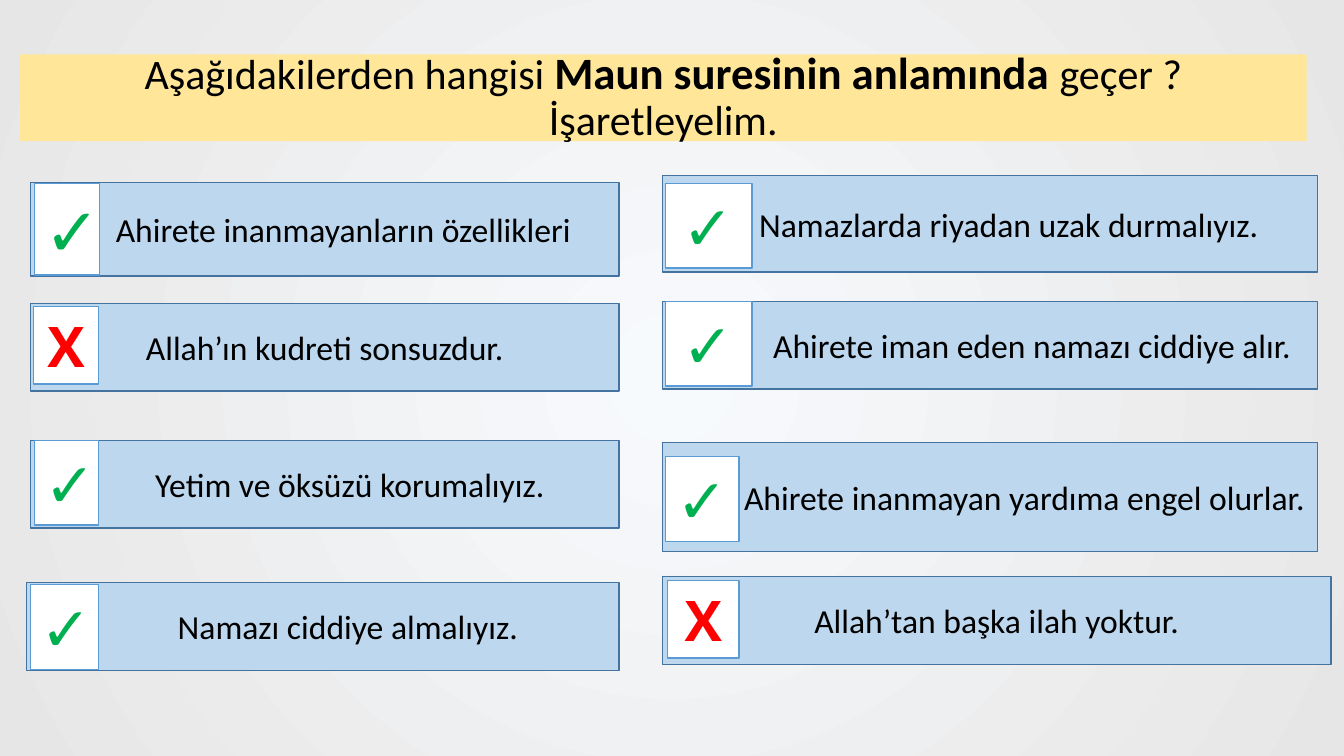
"""Build a quiz slide with eight statements, each with a tick or cross box."""
import pptx
import pptx.util
import pptx.dml.color
import pptx.enum.shapes
import pptx.enum.text
import pptx.oxml
import pptx.oxml.ns

Inches, Pt = pptx.util.Inches, pptx.util.Pt
ALIGN = pptx.enum.text.PP_ALIGN

TITLE = [("Aşağıdakilerden hangisi ", 30, False),
         ("Maun suresinin anlamında ", 32, True),
         ("geçer ? İşaretleyelim.", 30, False)]
TICK, CROSS = ("✓", "00B050"), ("X", "FF0000")

# text, bar, indent, align, mark, mark box, mark size, mark font
ITEMS = [
    ("Ahirete inanmayanların özellikleri", (0.3, 1.81, 5.84, 0.93), 0.37,
     ALIGN.CENTER, TICK, (0.34, 1.82, 0.65, 0.91), 48, "Open Sans"),
    ("Allah’ın kudreti sonsuzdur.", (0.3, 3.01, 5.84, 0.87), 0,
     ALIGN.CENTER, CROSS, (0.33, 3.04, 0.65, 0.77), 40, "Open Sans"),
    ("Yetim ve öksüzü korumalıyız.", (0.3, 4.37, 5.84, 0.87), 0.5,
     ALIGN.CENTER, TICK, (0.34, 4.37, 0.64, 0.84), 44, "Open Sans"),
    ("Namazı ciddiye almalıyız.", (0.26, 5.78, 5.88, 0.87), 0.5,
     ALIGN.CENTER, TICK, (0.3, 5.8, 0.68, 0.84), 44, "Open Sans"),
    ("Namazlarda riyadan uzak durmalıyız.", (6.57, 1.74, 6.5, 0.96), 0.37,
     ALIGN.CENTER, TICK, (6.6, 1.82, 0.86, 0.84), 44, "Arial"),
    ("Ahirete iman eden namazı ciddiye alır.", (6.57, 2.99, 6.5, 0.87), 1,
     ALIGN.LEFT, TICK, (6.6, 2.99, 0.86, 0.84), 44, "Arial"),
    ("Ahirete inanmayan yardıma engel olurlar.", (6.57, 4.39, 6.5, 1.08), 0.68,
     ALIGN.CENTER, TICK, (6.6, 4.53, 0.73, 0.84), 44, "Arial"),
    ("Allah’tan başka ilah yoktur.", (6.57, 5.72, 6.63, 0.87), 0,
     ALIGN.CENTER, CROSS, (6.62, 5.76, 0.71, 0.77), 40, "Open Sans"),
]


def color(code):
    return pptx.dml.color.RGBColor.from_string(code)


def box(slide, at, fill, line, runs, font="Calibri", ink="000000",
        align=ALIGN.CENTER, indent=0):
    shape = slide.shapes.add_shape(pptx.enum.shapes.MSO_SHAPE.RECTANGLE,
                                   *map(Inches, at))
    shape.shadow.inherit = False
    shape.fill.solid()
    shape.fill.fore_color.rgb = color(fill)
    if line:
        shape.line.color.rgb = color(line)
        shape.line.width = Pt(1)
    else:
        shape.line.fill.background()
    frame = shape.text_frame
    frame.word_wrap = True
    frame.vertical_anchor = pptx.enum.text.MSO_ANCHOR.MIDDLE
    para = frame.paragraphs[0]
    para.alignment = align
    if indent:
        props = para._p.get_or_add_pPr()
        props.set("marL", str(Inches(indent)))
        props.set("indent", "0")
    for text, size, bold in runs:
        run = para.add_run()
        run.text = text
        run.font.name = font
        run.font.size = Pt(size)
        run.font.bold = bold
        run.font.color.rgb = color(ink)
    return para


def backdrop(slide):
    fill = slide.background.fill
    fill.gradient()
    for stop, place, code in zip(fill.gradient_stops, (0, 1), ("F7FAFD", "E7E6E6")):
        stop.position = place
        stop.color.rgb = color(code)
    qn = pptx.oxml.ns.qn
    grad = next(slide.element.iter(qn("a:gradFill")))
    for lin in grad.findall(qn("a:lin")):
        grad.remove(lin)
    grad.append(pptx.oxml.parse_xml(
        f'<a:path {pptx.oxml.ns.nsdecls("a")} path="circle">'
        '<a:fillToRect l="50000" t="50000" r="50000" b="50000"/></a:path>'))


def main():
    deck = pptx.Presentation()
    deck.slide_width, deck.slide_height = Inches(13.33), Inches(7.5)
    slide = deck.slides.add_slide(deck.slide_layouts[6])
    backdrop(slide)
    title = box(slide, (0.2, 0.54, 12.76, 0.86), "FFE699", None, TITLE)
    title.line_spacing = 0.9
    for text, bar, indent, align, (sign, ink), place, size, font in ITEMS:
        box(slide, bar, "BDD7EE", "43739E", [(text, 24, False)],
            align=align, indent=indent)
        box(slide, place, "FFFFFF", "5B9BD5", [(sign, size, True)], font, ink)
    deck.save("out.pptx")


if __name__ == "__main__":
    main()
